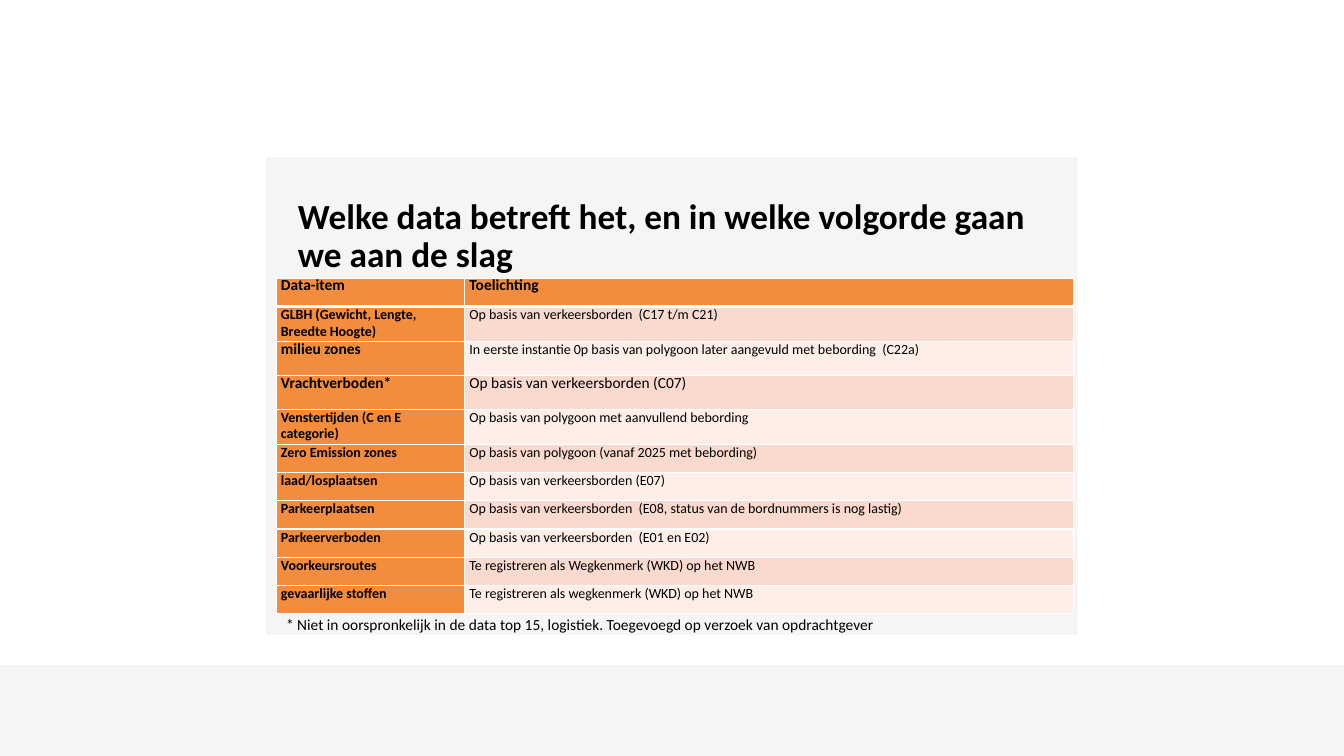
import pptx
import pptx.dml.color
import pptx.enum.shapes
import pptx.enum.text
import pptx.oxml
import pptx.oxml.ns
import pptx.util
from dataclasses import dataclass

Cm, Pt = pptx.util.Cm, pptx.util.Pt
Anchor = pptx.enum.text.MSO_ANCHOR


@dataclass(frozen=True)
class Theme:
    font: str = "Calibri"
    text: str = "000000"
    panel: str = "F5F5F5"
    accent: str = "F38C3C"
    bands: tuple = ("FADACE", "FDEEE8")
    border: str = "FFFFFF"
    title: float = 25.2
    large: float = 11
    small: float = 10


THEME = Theme()

# Label, explanation, label size, explanation size, row height in cm
L, S = THEME.large, THEME.small
ROWS = [
    ("Data-item", "Toelichting", L, L, 0.71),
    ("GLBH (Gewicht, Lengte, Breedte Hoogte)", "Op basis van verkeersborden  (C17 t/m C21)", S, S, 0.89),
    ("milieu zones",
     "In eerste instantie 0p basis van polygoon later aangevuld met bebording  (C22a)", L, S, 0.85),
    ("Vrachtverboden*", "Op basis van verkeersborden (C07)", L, L, 0.85),
    ("Venstertijden (C en E categorie)", "Op basis van polygoon met aanvullend bebording", S, S, 0.89),
    ("Zero Emission zones", "Op basis van polygoon (vanaf 2025 met bebording)", S, S, 0.71),
    ("laad/losplaatsen", "Op basis van verkeersborden (E07)", S, S, 0.71),
    ("Parkeerplaatsen",
     "Op basis van verkeersborden  (E08, status van de bordnummers is nog lastig)", S, S, 0.71),
    ("Parkeerverboden", "Op basis van verkeersborden  (E01 en E02)", S, S, 0.71),
    ("Voorkeursroutes", "Te registreren als Wegkenmerk (WKD) op het NWB", S, S, 0.71),
    ("gevaarlijke stoffen", "Te registreren als wegkenmerk (WKD) op het NWB", S, S, 0.71),
]


def rgb(value):
    return pptx.dml.color.RGBColor.from_string(value)


def add_run(p, text, size, bold=False):
    r = p.add_run()
    r.text = text
    r.font.name, r.font.size, r.font.bold = THEME.font, Pt(size), bold
    r.font.color.rgb = rgb(THEME.text)


def add_panel(s, x, y, w, h):
    sp = s.shapes.add_shape(pptx.enum.shapes.MSO_SHAPE.RECTANGLE, Cm(x), Cm(y), Cm(w), Cm(h))
    sp.shadow.inherit = False
    sp.fill.solid()
    sp.fill.fore_color.rgb = rgb(THEME.panel)
    sp.line.fill.background()


def add_text(s, x, y, w, h, text, size, bold=False, anchor=Anchor.TOP, spacing=1.0):
    tf = s.shapes.add_textbox(Cm(x), Cm(y), Cm(w), Cm(h)).text_frame
    tf.word_wrap = True
    tf.vertical_anchor = anchor
    p = tf.paragraphs[0]
    p.line_spacing = spacing
    add_run(p, text, size, bold)


def set_borders(cell, top, bottom):
    tc_pr = cell._tc.get_or_add_tcPr()
    widths = {"L": 1, "R": 1, "T": top, "B": bottom}
    for i, (side, width) in enumerate(widths.items()):
        tc_pr.insert(i, pptx.oxml.parse_xml(
            f'<a:ln{side} {pptx.oxml.ns.nsdecls("a")} w="{Pt(width)}"><a:solidFill>'
            f'<a:srgbClr val="{THEME.border}"/></a:solidFill></a:ln{side}>'))


def fill_cell(cell, text, size, bold, color):
    cell.margin_left = cell.margin_right = Cm(0.12)
    cell.margin_top = cell.margin_bottom = 0
    cell.fill.solid()
    cell.fill.fore_color.rgb = rgb(color)
    p = cell.text_frame.paragraphs[0]
    p.line_spacing = Pt(12)
    add_run(p, text, size, bold)


def add_data_table(s, x, y, col_widths):
    height = sum(row[-1] for row in ROWS)
    table = s.shapes.add_table(len(ROWS), len(col_widths), Cm(x), Cm(y),
                               Cm(sum(col_widths)), Cm(height)).table
    for column, width in zip(table.columns, col_widths):
        column.width = Cm(width)
    for i, (label, note, label_size, note_size, row_height) in enumerate(ROWS):
        table.rows[i].height = Cm(row_height)
        header = i == 0
        note_color = THEME.accent if header else THEME.bands[(i - 1) % 2]
        fill_cell(table.cell(i, 0), label, label_size, True, THEME.accent)
        fill_cell(table.cell(i, 1), note, note_size, header, note_color)
        for cell in table.rows[i].cells:
            set_borders(cell, top=3 if i == 1 else 1, bottom=3 if header else 1)


def main():
    prs = pptx.Presentation()
    prs.slide_width, prs.slide_height = Cm(33.87), Cm(19.05)
    s = prs.slides.add_slide(prs.slide_layouts[6])

    # Background panels
    add_panel(s, 6.71, 3.96, 20.45, 12.04)
    add_panel(s, 0, 16.76, 33.87, 2.29)

    # Title
    add_text(s, 7.26, 4.9, 19.79, 1.57,
             "Welke data betreft het, en in welke volgorde gaan we aan de slag",
             THEME.title, bold=True, spacing=0.9)

    # Data items
    add_data_table(s, 6.96, 7.01, (4.75, 15.34))

    # Footnote
    add_text(s, 6.96, 15.37, 21.77, 0.74,
             "* Niet in oorspronkelijk in de data top 15, logistiek. "
             "Toegevoegd op verzoek van opdrachtgever", THEME.large, anchor=Anchor.MIDDLE)

    prs.save("out.pptx")


if __name__ == "__main__":
    main()
